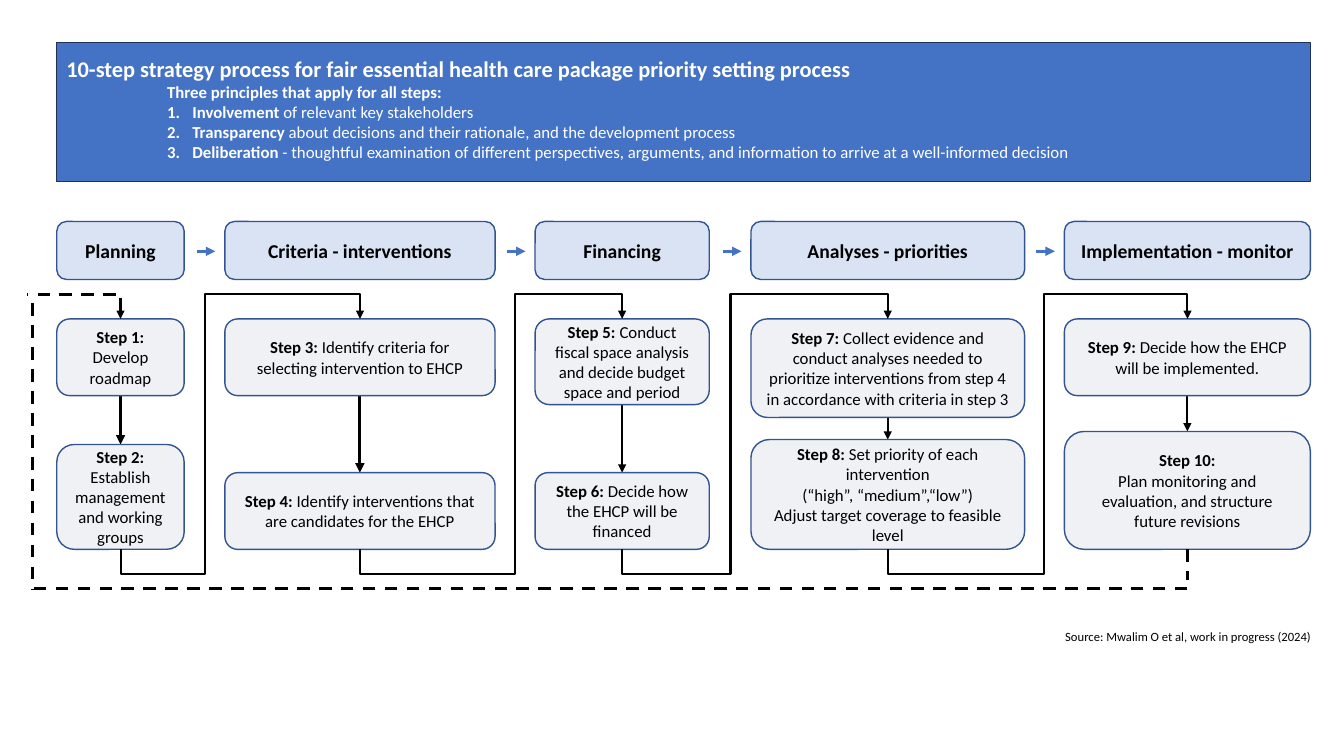
"""Build a slide showing a ten-step priority setting process."""
from dataclasses import dataclass

from pptx import Presentation
from pptx.dml.color import RGBColor as Color
from pptx.enum.dml import MSO_LINE_DASH_STYLE as Dash
from pptx.enum.shapes import MSO_CONNECTOR as ConnectorKind, MSO_SHAPE as ShapeKind
from pptx.enum.text import MSO_ANCHOR as Anchor, PP_ALIGN as Align
from pptx.oxml.ns import qn
from pptx.oxml.xmlchemy import OxmlElement as new_element
from pptx.shapes.autoshape import Shape
from pptx.shapes.connector import Connector
from pptx.slide import Slide
from pptx.text.text import _Paragraph as Paragraph
from pptx.util import Pt


@dataclass(frozen=True)
class Theme:
    """Colours, font and type sizes of the slide."""
    font: str = "Calibri"
    black: Color = Color(0, 0, 0)
    white: Color = Color(255, 255, 255)
    blue: Color = Color.from_string("4472C4")
    banner_line: Color = Color.from_string("1E3256")
    phase_fill: Color = Color.from_string("DAE3F3")
    step_fill: Color = Color.from_string("EFF1F5")
    box_line: Color = Color.from_string("325491")
    title_size: float = 16
    phase_size: float = 14
    body_size: float = 12
    source_size: float = 9
    outline: float = 1
    thin: float = 1.5
    thick: float = 2.25


@dataclass(frozen=True)
class Step:
    """A step box: bold label, lines of text and height."""
    label: str
    lines: tuple[str, ...]
    height: float


@dataclass(frozen=True)
class Phase:
    """A column with a heading and two steps."""
    name: str
    left: float
    width: float
    first: Step
    second: Step
    arrow_weight: float

    @property
    def center(self) -> float:
        """Return the horizontal middle of the column."""
        return self.left + self.width / 2


@dataclass(frozen=True)
class Line:
    """A straight line between two points."""
    x1: float
    y1: float
    x2: float
    y2: float


THEME = Theme()
PHASE_TOP, PHASE_HEIGHT, PHASE_ARROW_Y = 158.2, 41.4, 179.5
STEPS_TOP, STEPS_BOTTOM = 227.8, 392.4
LOOP_REACH, LANE_OFFSET = 18, 14.5
FEEDBACK_LEFT, FEEDBACK_TOP, FEEDBACK_BOTTOM = 23, 210.2, 420.5

PHASES = (
    Phase("Planning", 40.6, 91,
          Step("Step 1:", (" Develop roadmap",), 54.8),
          Step("Step 2:", (" Establish management and working groups",), 74.9), THEME.thick),
    Phase("Criteria - interventions", 160.6, 193,
          Step("Step 3:", (" Identify criteria for selecting intervention to EHCP",), 54.8),
          Step("Step 4: ", ("Identify interventions that are candidates for the EHCP",), 54.8),
          THEME.thick),
    Phase("Financing", 382.2, 124.4,
          Step("Step 5: ", ("Conduct fiscal space analysis and decide budget space and period",),
               61.2),
          Step("Step 6: ", ("Decide how the EHCP will be financed",), 54.8), THEME.thin),
    Phase("Analyses - priorities", 536.4, 195.5,
          Step("Step 7: ", ("Collect evidence and conduct analyses needed to prioritize "
                            "interventions from step 4 in accordance with criteria in step 3",),
               70.4),
          Step("Step 8: ", ("Set priority of each intervention", "(“high”, “medium”,“low”)",
                            "Adjust target coverage to feasible level"), 78.4), THEME.thin),
    Phase("Implementation - monitor", 760.3, 175.7,
          Step("Step 9: ", ("Decide how the EHCP will be implemented.",), 54.8),
          Step("Step 10:", ("", "Plan monitoring and evaluation, and structure future revisions"),
               84.2), THEME.thin),
)

PRINCIPLES = (
    ("Involvement", " of relevant key stakeholders"),
    ("Transparency", " about decisions and their rationale, and the development process"),
    ("Deliberation", " - thoughtful examination of different perspectives, arguments, and "
                     "information to arrive at a well-informed decision"),
)


def write(paragraph: Paragraph, bold: str, plain: str, size: float, color: Color) -> None:
    """Fill a paragraph with a bold part and a plain part."""
    for text, is_bold in ((bold, True), (plain, False)):
        if text:
            run = paragraph.add_run()
            run.text = text
            run.font.bold = is_bold
    font = paragraph.font
    font.name, font.size = THEME.font, Pt(size)
    font.color.rgb = color


def add_box(slide: Slide, kind: ShapeKind, left: float, top: float, width: float,
            height: float, fill: Color, outline: Color) -> Shape:
    """Add a filled box with its text in the vertical middle."""
    shape = slide.shapes.add_shape(kind, Pt(left), Pt(top), Pt(width), Pt(height))
    shape.shadow.inherit = False
    shape.fill.solid()
    shape.fill.fore_color.rgb = fill
    shape.line.color.rgb = outline
    shape.line.width = Pt(THEME.outline)
    shape.text_frame.word_wrap = True
    shape.text_frame.vertical_anchor = Anchor.MIDDLE
    return shape


def style_connector(connector: Connector, color: Color, weight: float,
                    arrow: bool = True, dashed: bool = False) -> None:
    """Set line, arrowhead and dashes, and remove the shadow."""
    connector.line.color.rgb = color
    connector.line.width = Pt(weight)
    if dashed:
        connector.line.dash_style = Dash.DASH
    properties = connector.element.spPr
    if arrow:
        tail = new_element("a:tailEnd")
        tail.set("type", "triangle")
        properties.find(qn("a:ln")).append(tail)
    properties.append(new_element("a:effectLst"))


def add_line(slide: Slide, line: Line, color: Color, weight: float,
             arrow: bool = True, dashed: bool = False) -> None:
    """Add a straight line or arrow."""
    connector = slide.shapes.add_connector(
        ConnectorKind.STRAIGHT, Pt(line.x1), Pt(line.y1), Pt(line.x2), Pt(line.y2))
    style_connector(connector, color, weight, arrow, dashed)


def add_loop(slide: Slide, start: Phase, end: Phase) -> None:
    """Add the bent arrow from the foot of one column to the head of the next."""
    across, up = end.center - start.center, STEPS_BOTTOM - STEPS_TOP
    middle_x, middle_y = start.center + across / 2, STEPS_TOP + up / 2
    connector = slide.shapes.add_connector(
        ConnectorKind.ELBOW, Pt(middle_x + up / 2), Pt(middle_y + across / 2),
        Pt(middle_x - up / 2), Pt(middle_y - across / 2))
    properties = connector.element.spPr
    properties.xfrm.set("rot", "5400000")
    properties.prstGeom.set("prst", "bentConnector5")
    reach = LOOP_REACH / up
    lane = (end.left - LANE_OFFSET - start.center) / across
    properties.prstGeom.rewrite_guides(
        [(f"adj{number}", round(share * 100000))
         for number, share in enumerate((-reach, lane, 1 + reach), 1)])
    style_connector(connector, THEME.black, THEME.thin)


def add_step(slide: Slide, phase: Phase, step: Step, top: float) -> None:
    """Add one step box to its column."""
    shape = add_box(slide, ShapeKind.ROUNDED_RECTANGLE, phase.left, top, phase.width,
                    step.height, THEME.step_fill, THEME.box_line)
    for index, text in enumerate(step.lines):
        frame = shape.text_frame
        paragraph = frame.add_paragraph() if index else frame.paragraphs[0]
        paragraph.alignment = Align.CENTER
        write(paragraph, "" if index else step.label, text, THEME.body_size, THEME.black)


def add_phase(slide: Slide, phase: Phase) -> None:
    """Add a column: heading, two steps and the arrow between them."""
    second_top = STEPS_BOTTOM - phase.second.height
    add_line(slide, Line(phase.center, STEPS_TOP + phase.first.height, phase.center, second_top),
             THEME.black, phase.arrow_weight)
    heading = add_box(slide, ShapeKind.ROUNDED_RECTANGLE, phase.left, PHASE_TOP, phase.width,
                      PHASE_HEIGHT, THEME.phase_fill, THEME.box_line)
    paragraph = heading.text_frame.paragraphs[0]
    paragraph.alignment = Align.CENTER
    write(paragraph, phase.name, "", THEME.phase_size, THEME.black)
    add_step(slide, phase, phase.first, STEPS_TOP)
    add_step(slide, phase, phase.second, second_top)


def add_feedback(slide: Slide) -> None:
    """Add the dashed way back from the last step to the first."""
    first, last = PHASES[0].center, PHASES[-1].center
    for line in (Line(last, STEPS_BOTTOM, last, 414),
                 Line(last, FEEDBACK_BOTTOM, FEEDBACK_LEFT, FEEDBACK_BOTTOM),
                 Line(FEEDBACK_LEFT, 216.7, FEEDBACK_LEFT, FEEDBACK_BOTTOM),
                 Line(82.8, FEEDBACK_TOP, 19.4, FEEDBACK_TOP)):
        add_line(slide, line, THEME.black, THEME.thick, arrow=False, dashed=True)
    add_line(slide, Line(first, 213.1, first, STEPS_TOP), THEME.black, THEME.thin)


def add_banner(slide: Slide) -> None:
    """Add the title banner with the numbered principles."""
    shape = add_box(slide, ShapeKind.RECTANGLE, 40.3, 30.2, 895.7, 99.6,
                    THEME.blue, THEME.banner_line)
    frame = shape.text_frame
    frame.margin_bottom = Pt(18.2)
    title = frame.paragraphs[0]
    title.alignment, title.line_spacing = Align.LEFT, 1.5
    write(title, "10-step strategy process for fair essential health care package "
                 "priority setting process", "", THEME.title_size, THEME.white)
    for index, (bold, plain) in enumerate(
            (("Three principles that apply for all steps:", ""), *PRINCIPLES)):
        paragraph = frame.add_paragraph()
        paragraph.alignment = Align.LEFT
        properties = paragraph._p.get_or_add_pPr()
        properties.set("marL", str(Pt(90 if index else 72)))
        properties.set("indent", str(Pt(-18 if index else 0)))
        if index:
            number = new_element("a:buAutoNum")
            number.set("type", "arabicPeriod")
            properties.append(number)
        write(paragraph, bold, plain, THEME.body_size, THEME.white)


def add_source(slide: Slide) -> None:
    """Add the source line at the lower right."""
    shape = slide.shapes.add_textbox(Pt(753.8), Pt(445.7), Pt(198), Pt(18))
    shape.text_frame.word_wrap = True
    write(shape.text_frame.paragraphs[0], "", "Source: Mwalim O et al, work in progress (2024)",
          THEME.source_size, THEME.black)


def main() -> None:
    """Build and save the presentation."""
    presentation = Presentation()
    presentation.slide_width, presentation.slide_height = Pt(960), Pt(540)
    slide = presentation.slides.add_slide(presentation.slide_layouts[6])
    for phase in PHASES:
        add_phase(slide, phase)
    for start, end in zip(PHASES, PHASES[1:]):
        add_line(slide, Line(end.left - 20.2, PHASE_ARROW_Y, end.left - 6.8, PHASE_ARROW_Y),
                 THEME.blue, THEME.thick)
        add_loop(slide, start, end)
    add_feedback(slide)
    add_banner(slide)
    add_source(slide)
    presentation.save("out.pptx")


if __name__ == "__main__":
    main()
